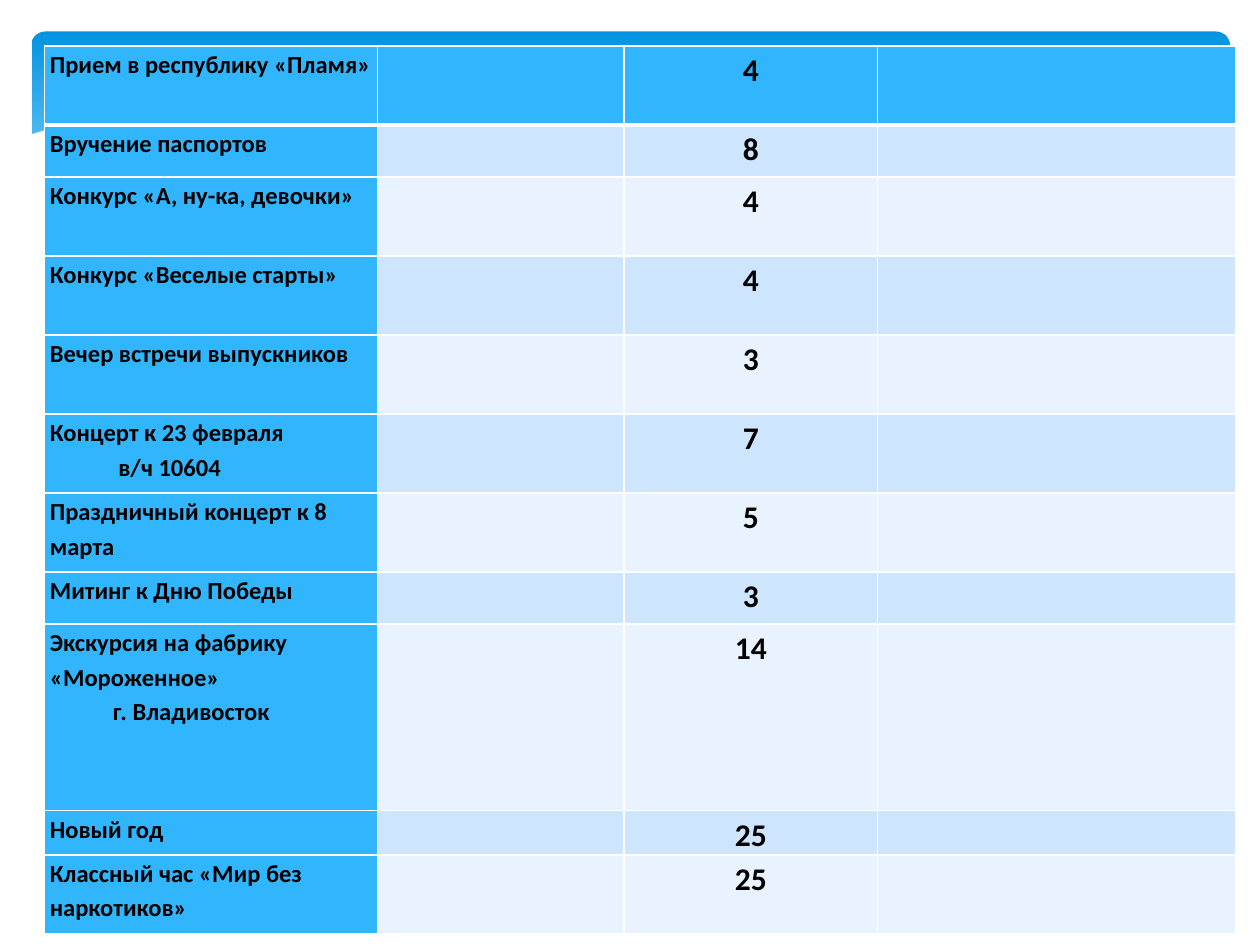
from lxml import etree
from pptx import Presentation
from pptx.dml.color import RGBColor
from pptx.enum.shapes import MSO_SHAPE
from pptx.enum.text import PP_ALIGN
from pptx.oxml.ns import qn
from pptx.util import Pt

ROUNDED = MSO_SHAPE.ROUNDED_RECTANGLE
LEFT, CENTER = PP_ALIGN.LEFT, PP_ALIGN.CENTER

WHITE = RGBColor(0xFF, 0xFF, 0xFF)
BLACK = RGBColor(0x00, 0x00, 0x00)
DEEP_BLUE = RGBColor(0x02, 0x93, 0xE0)
SKY_BLUE = RGBColor(0x83, 0xD3, 0xFE)
ACCENT = RGBColor(0x31, 0xB6, 0xFD)
BANDS = (RGBColor(0xE8, 0xF3, 0xFF), RGBColor(0xCE, 0xE5, 0xFE))

FONT = "Calibri"
COLUMN_WIDTHS = (190.1, 141.1, 144.7, 204.8)
SHORT_ROW, ROW, TALL_ROW, LAST_BUT_ONE = 29.7, 45.2, 106.6, 25.2
SECOND_LINE_INDENT = 36

EVENTS = (
    (("Прием в республику «Пламя»",), "4", ROW),
    (("Вручение паспортов",), "8", SHORT_ROW),
    (("Конкурс «А, ну-ка, девочки»",), "4", ROW),
    (("Конкурс «Веселые старты»",), "4", ROW),
    (("Вечер встречи выпускников",), "3", ROW),
    (("Концерт к 23 февраля", " в/ч 10604"), "7", ROW),
    (("Праздничный концерт к 8 марта",), "5", ROW),
    (("Митинг к Дню Победы",), "3", SHORT_ROW),
    (("Экскурсия на фабрику «Мороженное»", "г. Владивосток"), "14", TALL_ROW),
    (("Новый год",), "25", LAST_BUT_ONE),
    (("Классный час «Мир без наркотиков»",), "25", ROW),
)

WAVE = (
    (1, 0.43), (0.96, 0.52), (0.9, 0.6), (0.82, 0.64), (0.74, 0.62),
    (0.65, 0.54), (0.55, 0.42), (0.44, 0.25), (0.36, 0.12), (0.28, 0.05),
    (0.22, 0.01), (0.16, 0), (0.1, 0.03), (0.05, 0.09), (0.02, 0.16),
    (0, 0.2), (0, 1), (1, 1),
)


def add_banner(slide, left, top, width, height):
    banner = slide.shapes.add_shape(ROUNDED, Pt(left), Pt(top), Pt(width), Pt(height))
    banner.adjustments[0] = 0.07
    banner.shadow.inherit = False
    banner.line.fill.background()
    banner.fill.gradient()
    banner.fill.gradient_angle = 270
    for stop, color, position in zip(
        banner.fill.gradient_stops, (DEEP_BLUE, SKY_BLUE), (0, 0.9)
    ):
        stop.color.rgb = color
        stop.position = position


def add_wave(slide, left, top, width, height):
    points = [(Pt(left + x * width), Pt(top + y * height)) for x, y in WAVE]
    builder = slide.shapes.build_freeform(*points[0])
    builder.add_line_segments(points[1:], close=True)
    wave = builder.convert_to_shape()
    wave.shadow.inherit = False
    wave.fill.solid()
    wave.fill.fore_color.rgb = WHITE
    wave.line.fill.background()


def set_borders(cell, widths):
    properties = cell._tc.get_or_add_tcPr()
    for index, (side, width) in enumerate(widths.items()):
        border = etree.Element(qn(f"a:{side}"), w=str(Pt(width)))
        fill = etree.SubElement(border, qn("a:solidFill"))
        etree.SubElement(fill, qn("a:srgbClr"), val=str(WHITE))
        properties.insert(index, border)


def write_cell(cell, lines, size, alignment):
    frame = cell.text_frame
    for index, line in enumerate(lines):
        paragraph = frame.add_paragraph() if index else frame.paragraphs[0]
        paragraph.alignment = alignment
        paragraph.line_spacing = 1.15
        if index:
            paragraph._p.get_or_add_pPr().set("marL", str(Pt(SECOND_LINE_INDENT)))
        run = paragraph.add_run()
        run.text = line
        run.font.name = FONT
        run.font.size = Pt(size)
        run.font.bold = True
        run.font.color.rgb = BLACK


def add_event_table(slide, left, top):
    width = sum(COLUMN_WIDTHS)
    height = sum(event[2] for event in EVENTS)
    table = slide.shapes.add_table(
        len(EVENTS), len(COLUMN_WIDTHS), Pt(left), Pt(top), Pt(width), Pt(height)
    ).table
    table.first_col = True
    table.horz_banding = True
    for column, column_width in zip(table.columns, COLUMN_WIDTHS):
        column.width = Pt(column_width)
    for row_index, (title, count, row_height) in enumerate(EVENTS):
        row = table.rows[row_index]
        row.height = Pt(row_height)
        borders = {
            "lnL": 1,
            "lnR": 1,
            "lnT": 3 if row_index == 1 else 1,
            "lnB": 3 if row_index == 0 else 1,
        }
        for column_index, cell in enumerate(row.cells):
            cell.margin_left = cell.margin_right = Pt(3)
            cell.margin_top = cell.margin_bottom = Pt(0)
            is_header = row_index == 0 or column_index == 0
            cell.fill.solid()
            cell.fill.fore_color.rgb = ACCENT if is_header else BANDS[row_index % 2]
            set_borders(cell, borders)
        write_cell(row.cells[0], title, 14, LEFT)
        write_cell(row.cells[2], (count,), 18, CENTER)


def main():
    presentation = Presentation()
    presentation.slide_width = Pt(720)
    presentation.slide_height = Pt(540)
    slide = presentation.slides.add_slide(presentation.slide_layouts[6])
    add_banner(slide, 18, 18, 684.7, 112.3)
    add_wave(slide, 16.6, 56.2, 686.9, 104.8)
    add_event_table(slide, 25.5, 26.2)
    presentation.save("out.pptx")


if __name__ == "__main__":
    main()
